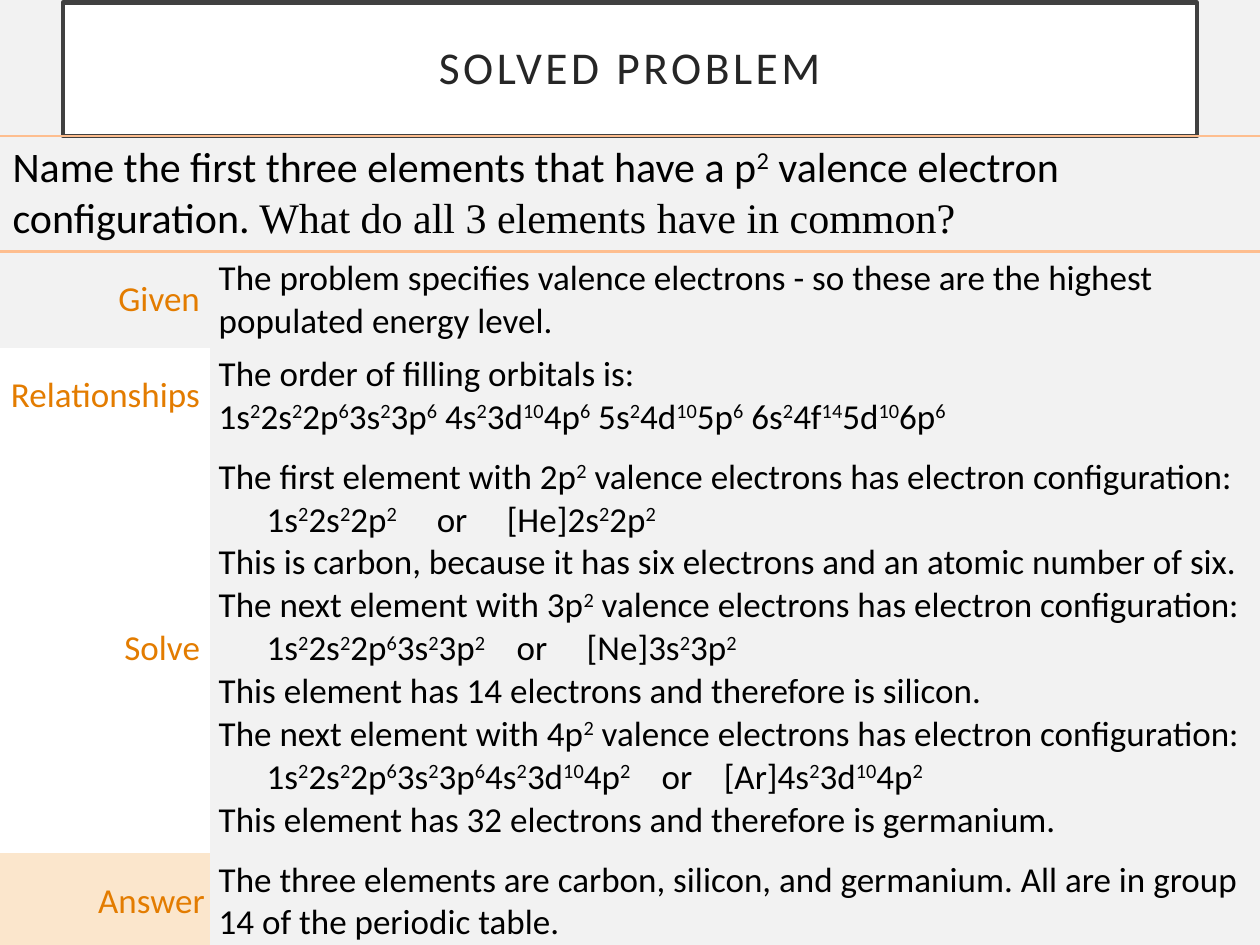
from lxml.etree import SubElement
from pptx import Presentation
from pptx.dml.color import RGBColor
from pptx.enum.text import MSO_ANCHOR, PP_ALIGN
from pptx.oxml.ns import qn
from pptx.util import Pt

BLACK = RGBColor(0x00, 0x00, 0x00)
WHITE = RGBColor(0xFF, 0xFF, 0xFF)
GRAY = RGBColor(0xF2, 0xF2, 0xF2)
FRAME = RGBColor(0x40, 0x40, 0x40)
INK = RGBColor(0x26, 0x26, 0x26)
ORANGE = RGBColor(0xE3, 0x7C, 0x00)
PEACH = RGBColor(0xFB, 0xE6, 0xCC)
RULE = RGBColor(0xFE, 0xBE, 0x8F)

# Text between carets is superscript.
TITLE = "SOLVED PROBLEM"
QUESTION = "Name the first three elements that have a p^2^ valence electron configuration. "
FOLLOW_UP = "What do all 3 elements have in common?"
STEPS = [
    ("Given", 54, None, [
        ("The problem specifies valence electrons - so these are the highest "
         "populated energy level.", ()),
    ]),
    ("Relationships", 54, WHITE, [
        ("The order of filling orbitals is:", ()),
        ("1s^2^2s^2^2p^6^3s^2^3p^6^ 4s^2^3d^10^4p^6^ 5s^2^4d^10^5p^6^ "
         "6s^2^4f^14^5d^10^6p^6^", ()),
    ]),
    ("Solve", 234, WHITE, [
        ("The first element with 2p^2^ valence electrons has electron configuration:", ()),
        ("\t1s^2^2s^2^2p^2^\tor\t[He]2s^2^2p^2^", (27.4, 124.6, 164.6)),
        ("This is carbon, because it has six electrons and an atomic number of six.", ()),
        ("The next element with 3p^2^ valence electrons has electron configuration:", ()),
        ("\t1s^2^2s^2^2p^6^3s^2^3p^2^\tor\t[Ne]3s^2^3p^2^", (27.4, 170.3, 210.3)),
        ("This element has 14 electrons and therefore is silicon.", ()),
        ("The next element with 4p^2^ valence electrons has electron configuration:", ()),
        ("\t1s^2^2s^2^2p^6^3s^2^3p^6^4s^2^3d^10^4p^2^\tor\t[Ar]4s^2^3d^10^4p^2^",
         (27.4, 253.1, 288.6)),
        ("This element has 32 electrons and therefore is germanium.", ()),
    ]),
    ("Answer", 54, PEACH, [
        ("The three elements are carbon, silicon, and germanium. All are in group "
         "14 of the periodic table.", ()),
    ]),
]
NO_STYLE = "{2D5ABB26-0587-4C30-8999-92F81FD0307C}"


def write(para, text, size=20, color=BLACK, font="Calibri", align=PP_ALIGN.LEFT,
          spacing=None, tabs=()):
    para.alignment = align
    if tabs:
        stops = SubElement(para._p.get_or_add_pPr(), qn("a:tabLst"))
        for stop in tabs:
            SubElement(stops, qn("a:tab"), pos=str(Pt(stop)), algn="l")
    for index, part in enumerate(text.split("^")):
        if not part:
            continue
        span = para.add_run()
        span.text = part
        span.font.size = Pt(size)
        span.font.name = font
        span.font.color.rgb = color
        properties = span._r.get_or_add_rPr()
        if index % 2:
            properties.set("baseline", "30000")
        if spacing:
            properties.set("spc", str(spacing * 100))


def add_plain_table(page, top, widths, heights):
    frame = page.shapes.add_table(len(heights), len(widths), Pt(0), Pt(top),
                                  Pt(sum(widths)), Pt(sum(heights)))
    table = frame.table
    table.first_row = table.horz_banding = False
    table._tbl.tblPr.find(qn("a:tableStyleId")).text = NO_STYLE
    for column, width in zip(table.columns, widths):
        column.width = Pt(width)
    for row, height in zip(table.rows, heights):
        row.height = Pt(height)
    return table


def format_cell(cell, fill=None, left=7.2, right=7.2, edge=3):
    cell.vertical_anchor = MSO_ANCHOR.MIDDLE
    cell.margin_left, cell.margin_right = Pt(left), Pt(right)
    cell.margin_top = cell.margin_bottom = Pt(edge)
    if fill is None:
        cell.fill.background()
    else:
        cell.fill.solid()
        cell.fill.fore_color.rgb = fill


def add_rules(cell, color, width):
    properties = cell._tc.get_or_add_tcPr()
    for index, side in enumerate(("a:lnT", "a:lnB")):
        line = properties.makeelement(qn(side), {"w": str(Pt(width))})
        fill = SubElement(line, qn("a:solidFill"))
        SubElement(fill, qn("a:srgbClr"), val=str(color))
        properties.insert(index, line)


def add_title(page):
    box = page.shapes.title
    box.left, box.top, box.width, box.height = Pt(36), Pt(1.44), Pt(648), Pt(76.32)
    box.fill.solid()
    box.fill.fore_color.rgb = WHITE
    box.line.color.rgb = FRAME
    box.line.width = Pt(2.5)
    frame = box.text_frame
    frame.vertical_anchor = MSO_ANCHOR.MIDDLE
    frame.margin_left = frame.margin_right = Pt(14.4)
    frame.margin_top = frame.margin_bottom = Pt(14.4)
    frame.paragraphs[0].line_spacing = 0.9
    write(frame.paragraphs[0], TITLE, size=26, color=INK, align=PP_ALIGN.CENTER, spacing=2)


def add_question(page):
    cell = add_plain_table(page, 77.76, [720], [66]).cell(0, 0)
    format_cell(cell, edge=3.6)
    add_rules(cell, RULE, 1.5)
    para = cell.text_frame.paragraphs[0]
    write(para, QUESTION, size=24)
    write(para, FOLLOW_UP, size=24, font="Times New Roman")


def add_steps(page):
    table = add_plain_table(page, 143.76, [120, 600], [step[1] for step in STEPS])
    for row, (label, _, fill, lines) in enumerate(STEPS):
        name, body = table.cell(row, 0), table.cell(row, 1)
        format_cell(name, fill, left=5.76, right=3 if label == "Answer" else 5.76)
        format_cell(body, left=5, right=5.76)
        write(name.text_frame.paragraphs[0], label, color=ORANGE, align=PP_ALIGN.RIGHT)
        for index, (text, tabs) in enumerate(lines):
            frame = body.text_frame
            para = frame.add_paragraph() if index else frame.paragraphs[0]
            write(para, text, tabs=tabs)


def main():
    deck = Presentation()
    deck.slide_width, deck.slide_height = Pt(720), Pt(540)
    page = deck.slides.add_slide(deck.slide_layouts[5])
    page.background.fill.solid()
    page.background.fill.fore_color.rgb = GRAY
    add_title(page)
    add_question(page)
    add_steps(page)
    deck.save("out.pptx")


if __name__ == "__main__":
    main()
